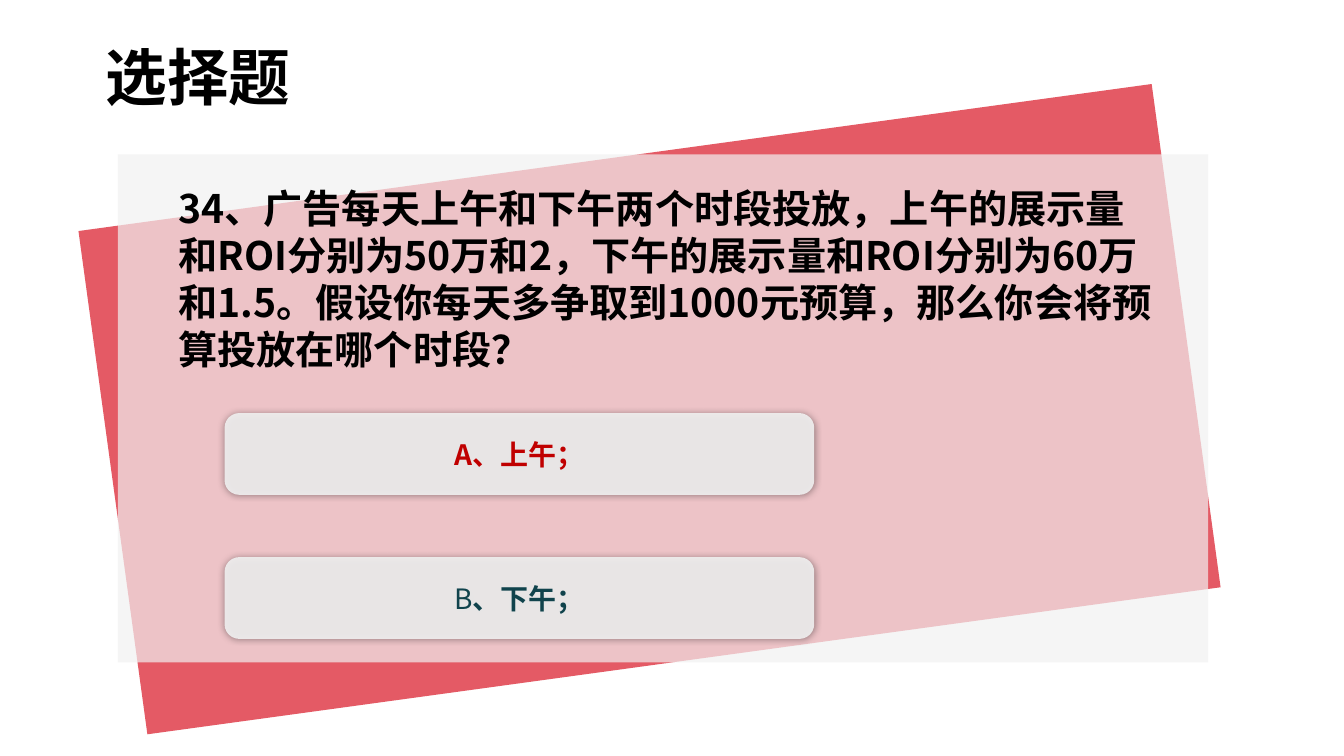
"""Build a multiple-choice question slide about advertising budget."""
from dataclasses import dataclass

from lxml.etree import SubElement
from pptx import Presentation
from pptx.dml.color import RGBColor
from pptx.enum.shapes import MSO_SHAPE as Preset
from pptx.enum.text import MSO_ANCHOR as Anchor, MSO_AUTO_SIZE as AutoSize, PP_ALIGN as Align
from pptx.oxml.ns import qn
from pptx.util import Cm, Pt

TITLE = "选择题"
QUESTION = (
    "34、广告每天上午和下午两个时段投放，上午的展示量和ROI分别为50万和2，"
    "下午的展示量和ROI分别为60万和1.5。"
    "假设你每天多争取到1000元预算，那么你会将预算投放在哪个时段？"
)
OPTIONS = [
    {"color": "C00000", "spans": [("A、上午；", True)]},
    {"color": "10434C", "spans": [("B", False), ("、下午；", True)]},
]
PANELS = [
    {"box": (2.72, 3.91, 27.3, 12.8), "color": "D91524", "rotation": -7.8},
    {"box": (2.97, 3.89, 27.48, 12.8), "color": "F1F1F1", "rotation": 0},
]
TITLE_BOX = (2.41, 0.84, 11.81, 2.13)
QUESTION_BOX = (4.24, 4.52, 25.2, 6.25)
OPTION_BOX = (5.66, 10.41, 14.86, 2.06)
OPTION_PITCH = 3.63


@dataclass(frozen=True)
class Theme:
    font: str = "Noto Sans CJK SC"
    ink: str = "000000"
    button: str = "F1F1F1"
    title_size: int = 44
    question_size: int = 28
    question_leading: float = 33.6
    option_size: int = 20
    panel_opacity: int = 70
    button_opacity: int = 90
    shadow_opacity: int = 40
    shadow_blur: int = 5


THEME = Theme()


def set_alpha(color, percent):
    SubElement(color, qn("a:alpha"), val=str(percent * 1000))


def place(shape, box):
    shape.left, shape.top, shape.width, shape.height = map(Cm, box)


def add_span(para, text, size, color, bold=True):
    span = para.add_run()
    span.text = text
    font = span.font
    font.name, font.size, font.bold = THEME.font, Pt(size), bold
    font.color.rgb = RGBColor.from_string(color)
    SubElement(font._element, qn("a:ea"), typeface=THEME.font)


def add_block(page, preset, box, color, opacity):
    block = page.shapes.add_shape(preset, *map(Cm, box))
    block.shadow.inherit = False
    block.line.fill.background()
    block.fill.solid()
    block.fill.fore_color.rgb = RGBColor.from_string(color)
    set_alpha(block.element.spPr.find(".//" + qn("a:srgbClr")), opacity)
    return block


def add_glow(block):
    effects = block.element.spPr.find(qn("a:effectLst"))
    shadow = SubElement(effects, qn("a:outerShdw"), blurRad=str(Pt(THEME.shadow_blur)),
                        dist="0", dir="0", algn="ctr", rotWithShape="0")
    set_alpha(SubElement(shadow, qn("a:srgbClr"), val=THEME.ink), THEME.shadow_opacity)


def fill_placeholder(holder, box, text, size, anchor):
    place(holder, box)
    frame = holder.text_frame
    frame.word_wrap, frame.auto_size = True, AutoSize.NONE
    frame.vertical_anchor = anchor
    para = frame.paragraphs[0]
    para.alignment = Align.LEFT
    para.space_before = Pt(0)
    add_span(para, text, size, THEME.ink)
    return para


def add_option(page, index, option):
    left, top, width, height = OPTION_BOX
    box = (left, top + index * OPTION_PITCH, width, height)
    button = add_block(page, Preset.ROUNDED_RECTANGLE, box, THEME.button, THEME.button_opacity)
    button.adjustments[0] = 0.18
    add_glow(button)
    button.text_frame.vertical_anchor = Anchor.MIDDLE
    para = button.text_frame.paragraphs[0]
    para.alignment = Align.CENTER
    for text, bold in option["spans"]:
        add_span(para, text, THEME.option_size, option["color"], bold)


def main():
    deck = Presentation()
    deck.slide_width, deck.slide_height = Cm(33.87), Cm(19.05)
    page = deck.slides.add_slide(deck.slide_layouts[1])
    title, question = page.placeholders

    for panel in PANELS:
        block = add_block(page, Preset.RECTANGLE, panel["box"], panel["color"],
                          THEME.panel_opacity)
        block.rotation = panel["rotation"]
        title.element.addprevious(block.element)

    fill_placeholder(title, TITLE_BOX, TITLE, THEME.title_size, Anchor.MIDDLE)
    para = fill_placeholder(question, QUESTION_BOX, QUESTION, THEME.question_size, Anchor.TOP)
    para.line_spacing = Pt(THEME.question_leading)
    settings = para._element.get_or_add_pPr()
    settings.set("marL", "0")
    settings.set("indent", "0")
    SubElement(settings, qn("a:buNone"))

    for index, option in enumerate(OPTIONS):
        add_option(page, index, option)
    deck.save("out.pptx")


if __name__ == "__main__":
    main()
